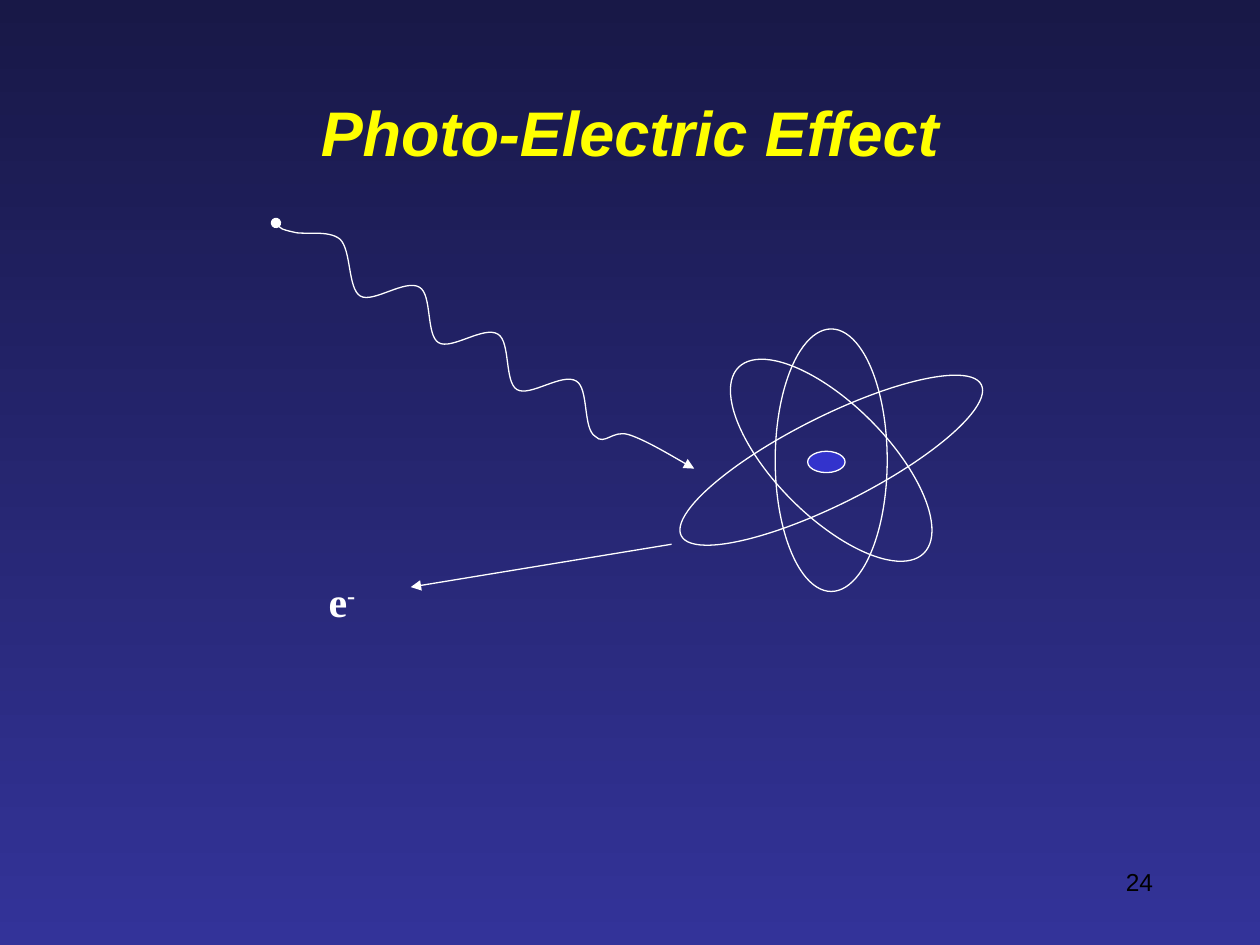
"""Build the Photo-Electric Effect slide."""
from dataclasses import dataclass

from pptx import Presentation
from pptx.dml.color import RGBColor
from pptx.enum import shapes, text
from pptx.oxml import ns, xmlchemy
from pptx.util import Pt


@dataclass(frozen=True)
class Theme:
    top: RGBColor = RGBColor(0x18, 0x18, 0x47)
    bottom: RGBColor = RGBColor(0x33, 0x33, 0x99)
    nucleus: RGBColor = RGBColor(0x33, 0x33, 0xCC)
    ink: RGBColor = RGBColor(0xFF, 0xFF, 0xFF)
    heading: RGBColor = RGBColor(0xFF, 0xFF, 0x00)
    number: RGBColor = RGBColor(0, 0, 0)
    sans: str = "Arial"
    serif: str = "Times New Roman"
    heading_size: float = 36
    label_size: float = 24
    number_size: float = 14
    stroke: float = 0.75


THEME = Theme()


def paint_background(slide):
    fill = slide.background.fill
    fill.gradient()
    fill.gradient_angle = 270
    for stop, color, position in zip(fill.gradient_stops, (THEME.top, THEME.bottom), (0, 1)):
        stop.color.rgb = color
        stop.position = position


def style_line(outline, head=None, tail=None):
    outline.line.color.rgb = THEME.ink
    outline.line.width = Pt(THEME.stroke)
    for tag, kind in (("a:headEnd", head), ("a:tailEnd", tail)):
        if kind:
            end = xmlchemy.OxmlElement(tag)
            end.set("type", kind)
            outline.line._get_or_add_ln().append(end)


def add_label(parent, box, runs, font, size, color, align=text.PP_ALIGN.LEFT,
              anchor=text.MSO_ANCHOR.TOP, bold=False, italic=False):
    label = parent.add_textbox(*map(Pt, box))
    frame = label.text_frame
    frame.word_wrap = True
    frame.vertical_anchor = anchor
    paragraph = frame.paragraphs[0]
    paragraph.alignment = align
    for words, baseline in runs:
        run = paragraph.add_run()
        run.text = words
        run.font.name, run.font.size = font, Pt(size)
        run.font.bold, run.font.italic = bold, italic
        run.font.color.rgb = color
        if baseline:
            run._r.get_or_add_rPr().set("baseline", str(baseline))


def add_ellipse(parent, center, size, angle=0, fill=None):
    (x, y), (width, height) = center, size
    ellipse = parent.add_shape(shapes.MSO_SHAPE.OVAL, Pt(x - width / 2), Pt(y - height / 2),
                               Pt(width), Pt(height))
    ellipse.rotation = angle
    ellipse.shadow.inherit = False
    if fill is None:
        ellipse.fill.background()
    else:
        ellipse.fill.solid()
        ellipse.fill.fore_color.rgb = fill
    style_line(ellipse)


def add_curve(parent, points, head, tail):
    start, *controls = [(Pt(x), Pt(y)) for x, y in points]
    builder = parent.build_freeform(*start)
    builder.add_line_segments(controls, close=False)
    curve = builder.convert_to_shape()
    segments = list(curve._element.iter(ns.qn("a:lnTo")))
    for first in range(0, len(segments), 3):
        bezier = xmlchemy.OxmlElement("a:cubicBezTo")
        segments[first].addprevious(bezier)
        for segment in segments[first:first + 3]:
            bezier.append(segment[0])
            segment.getparent().remove(segment)
    curve.fill.background()
    curve.shadow.inherit = False
    style_line(curve, head, tail)


def add_arrow(parent, start, end):
    arrow = parent.add_connector(shapes.MSO_CONNECTOR.STRAIGHT, *map(Pt, (*start, *end)))
    style_line(arrow, tail="triangle")
    arrow._element.spPr.append(xmlchemy.OxmlElement("a:effectLst"))


def photon_points():
    entry = [(157.7, 127.4), (159.1, 129.6), (160.6, 131), (167, 132.5),
             (172.8, 134.6), (187.9, 131), (194.4, 136.8),
             (200.9, 143.3), (198.7, 164.9), (205.9, 169.2)]
    cycle = [(213.1, 173.5), (231.8, 159.1), (239.8, 164.2),
             (247, 168.5), (243.4, 191.5), (250.6, 195.8)]
    leaving = [(345.6, 254.9), (349.9, 245.5), (359.3, 248.4),
               (368.6, 251.3), (390.2, 264.2), (396.7, 267.8)]
    waves = [(x + 44.8 * turn, y + 26.8 * turn) for turn in range(3) for x, y in cycle]
    return entry + waves + leaving


def main():
    deck = Presentation()
    deck.slide_width, deck.slide_height = Pt(720), Pt(540)
    slide = deck.slides.add_slide(deck.slide_layouts[6])
    paint_background(slide)
    add_label(slide.shapes, (54, 36, 612, 78), [("Photo-Electric Effect", 0)], THEME.sans,
              THEME.heading_size, THEME.heading, text.PP_ALIGN.CENTER,
              text.MSO_ANCHOR.MIDDLE, bold=True, italic=True)

    diagram = slide.shapes.add_group_shape().shapes
    add_ellipse(diagram, (472.2, 264), (21.4, 12.2), fill=THEME.nucleus)
    add_curve(diagram, photon_points(), "oval", "triangle")
    for size, angle in (((64, 150), 0), ((50, 192), 63.3), ((64, 150), 315.1)):
        add_ellipse(diagram, (475, 263), size, angle)
    add_arrow(diagram, (383.8, 311), (234.7, 335.5))
    add_label(diagram, (180.7, 325.5, 127.4, 36), [("e", 0), ("-", 32000)], THEME.serif,
              THEME.label_size, THEME.ink, bold=True)

    add_label(slide.shapes, (516, 492, 150, 36), [("24", 0)], THEME.sans,
              THEME.number_size, THEME.number, text.PP_ALIGN.RIGHT)
    deck.save("out.pptx")


if __name__ == "__main__":
    main()
